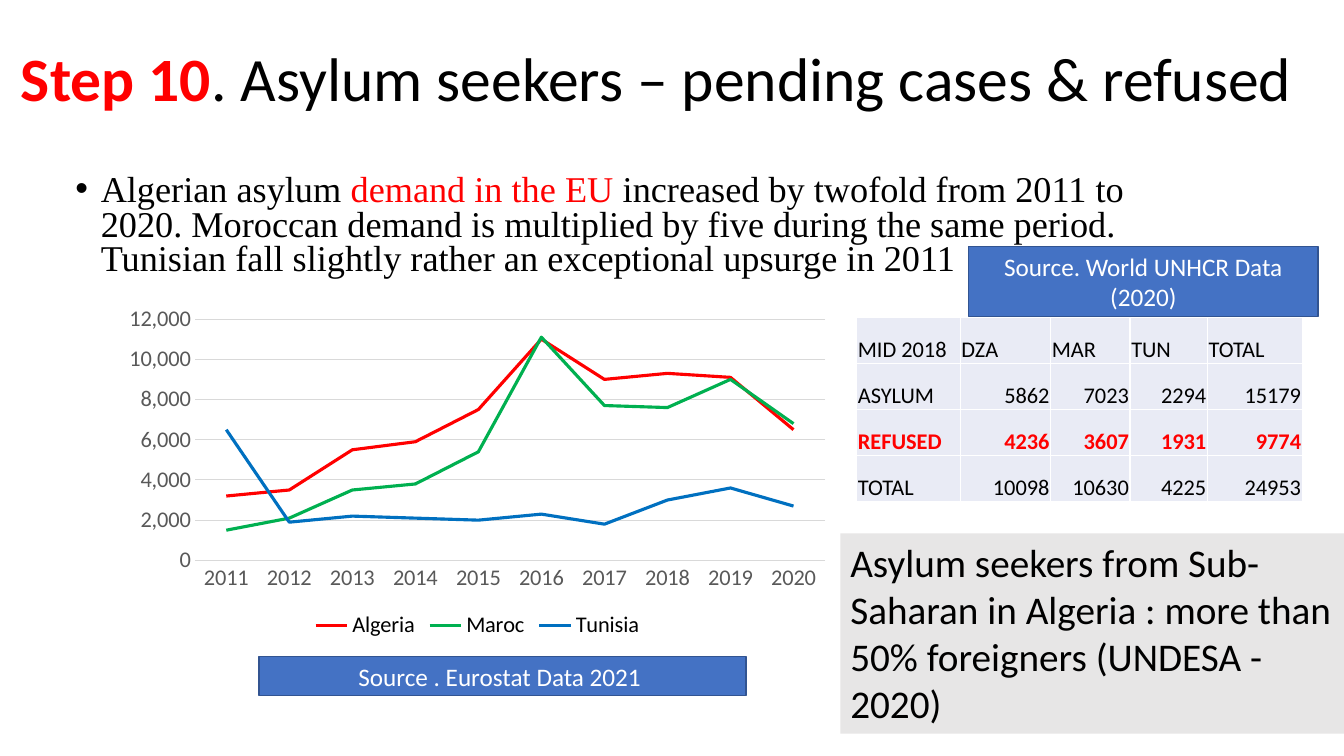
"""Build the slide on pending and refused asylum cases."""
from dataclasses import dataclass

from lxml.etree import SubElement
from pptx import Presentation
from pptx.chart.data import CategoryChartData
from pptx.dml.color import RGBColor
from pptx.enum.chart import XL_CHART_TYPE, XL_LEGEND_POSITION, XL_TICK_MARK
from pptx.enum.shapes import MSO_SHAPE
from pptx.enum.text import MSO_ANCHOR, PP_ALIGN
from pptx.oxml import parse_xml
from pptx.oxml.ns import nsdecls, qn
from pptx.util import Cm, Pt

BLACK, WHITE, RED = "000000", "FFFFFF", "FF0000"
BLUE, DARK_BLUE, GREY, PALE = "4472C4", "325491", "E7E6E6", "E9EBF5"
GRID, AXIS_TEXT = "D9D9D9", "595959"


@dataclass(frozen=True)
class Area:
    left: float
    top: float
    width: float
    height: float

    def lengths(self) -> tuple:
        return Cm(self.left), Cm(self.top), Cm(self.width), Cm(self.height)


@dataclass(frozen=True)
class Run:
    text: str
    color: str = BLACK
    bold: bool = False


@dataclass(frozen=True)
class Panel:
    area: Area
    text: str
    fill: str
    line: str | None
    size: float
    color: str
    align: PP_ALIGN
    anchor: MSO_ANCHOR


@dataclass(frozen=True)
class Country:
    name: str
    color: str
    requests: tuple


PANELS = [
    Panel(Area(6.53, 16.54, 12.27, 0.99), "Source . Eurostat Data 2021 ",
          BLUE, DARK_BLUE, 18, WHITE, PP_ALIGN.CENTER, MSO_ANCHOR.MIDDLE),
    Panel(Area(24.41, 6.22, 8.81, 1.75), "Source. World UNHCR Data (2020)",
          BLUE, DARK_BLUE, 18, WHITE, PP_ALIGN.CENTER, MSO_ANCHOR.MIDDLE),
    Panel(Area(21.18, 13.44, 12.7, 5.05),
          "Asylum seekers from Sub-Saharan in Algeria : more than 50% "
          "foreigners (UNDESA - 2020)",
          GREY, None, 28, BLACK, PP_ALIGN.LEFT, MSO_ANCHOR.TOP),
]
COUNTRIES = [
    Country("Algeria", RED,
            (3200, 3500, 5500, 5900, 7500, 11000, 9000, 9300, 9100, 6500)),
    Country("Maroc", "00B050",
            (1500, 2100, 3500, 3800, 5400, 11100, 7700, 7600, 9000, 6800)),
    Country("Tunisia", "0070C0",
            (6500, 1900, 2200, 2100, 2000, 2300, 1800, 3000, 3600, 2700)),
]
CASES = [
    ("MID 2018", "DZA", "MAR", "TUN", "TOTAL"),
    ("ASYLUM", "5862", "7023", "2294", "15179"),
    ("REFUSED", "4236", "3607", "1931", "9774"),
    ("TOTAL", "10098", "10630", "4225", "24953"),
]
CASE_WIDTHS = (2.61, 2.28, 2.0, 1.95, 2.39)


def rgb(color: str) -> RGBColor:
    return RGBColor.from_string(color)


def style_font(font, size: float, color: str, name: str = "Calibri",
               bold: bool = False) -> None:
    font.size, font.name, font.bold = Pt(size), name, bold
    font.color.rgb = rgb(color)


def write(frame, *runs: Run, size: float, font: str = "Calibri",
          align: PP_ALIGN = PP_ALIGN.LEFT, anchor: MSO_ANCHOR = MSO_ANCHOR.TOP,
          spacing: float = 1.0, bullet: bool = False) -> None:
    frame.word_wrap = True
    frame.vertical_anchor = anchor
    paragraph = frame.paragraphs[0]
    paragraph.alignment = align
    paragraph.line_spacing = spacing
    if bullet:
        properties = paragraph._p.get_or_add_pPr()
        properties.set("marL", str(Cm(0.64)))
        properties.set("indent", str(Cm(-0.64)))
        SubElement(properties, qn("a:buFont"), typeface="Arial")
        SubElement(properties, qn("a:buChar"), char="•")
    for part in runs:
        run = paragraph.add_run()
        run.text = part.text
        style_font(run.font, size, part.color, font, part.bold)


def add_panel(slide, panel: Panel) -> None:
    box = slide.shapes.add_shape(MSO_SHAPE.RECTANGLE, *panel.area.lengths())
    box.shadow.inherit = False
    box.fill.solid()
    box.fill.fore_color.rgb = rgb(panel.fill)
    if panel.line:
        box.line.color.rgb = rgb(panel.line)
        box.line.width = Pt(1)
    else:
        box.line.fill.background()
    write(box.text_frame, Run(panel.text, panel.color), size=panel.size,
          align=panel.align, anchor=panel.anchor)


def add_requests_chart(slide, area: Area) -> None:
    requests = CategoryChartData(number_format="#,##0")
    requests.categories = [str(year) for year in range(2011, 2021)]
    for country in COUNTRIES:
        requests.add_series(country.name, country.requests)
    chart = slide.shapes.add_chart(
        XL_CHART_TYPE.LINE, *area.lengths(), requests).chart
    style_font(chart.font, 10, BLACK)
    chart.has_title = False
    chart.has_legend = True
    chart.legend.position = XL_LEGEND_POSITION.BOTTOM
    chart.legend.include_in_layout = False
    style_font(chart.legend.font, 16, BLACK)
    chart.plots[0].vary_by_categories = False
    for series, country in zip(chart.plots[0].series, COUNTRIES):
        series.smooth = False
        series.format.line.color.rgb = rgb(country.color)
        series.format.line.width = Pt(2.25)
    years, amounts = chart.category_axis, chart.value_axis
    for axis in (years, amounts):
        axis.major_tick_mark = axis.minor_tick_mark = XL_TICK_MARK.NONE
        style_font(axis.tick_labels.font, 16, AXIS_TEXT)
    amounts.minimum_scale, amounts.maximum_scale = 0, 12000
    amounts.major_unit = 2000
    amounts.tick_labels.number_format = "#,##0"
    amounts.tick_labels.number_format_is_linked = False
    amounts.format.line.fill.background()
    for line in (years.format.line, amounts.major_gridlines.format.line):
        line.color.rgb = rgb(GRID)
        line.width = Pt(0.75)
    plot_area = chart._chartSpace.chart.plotArea
    for layout in plot_area.findall(qn("c:layout")):
        plot_area.remove(layout)
    plot_area.insert(0, parse_xml(
        f'<c:layout {nsdecls("c")}><c:manualLayout><c:layoutTarget val="inner"/>'
        '<c:xMode val="edge"/><c:yMode val="edge"/><c:x val="0.11"/>'
        '<c:y val="0.06"/><c:w val="0.87"/><c:h val="0.7"/>'
        '</c:manualLayout></c:layout>'))


def add_cases_table(slide, area: Area) -> None:
    table = slide.shapes.add_table(
        len(CASES), len(CASE_WIDTHS), *area.lengths()).table
    table.first_row = table.horz_banding = False
    for column, width in zip(table.columns, CASE_WIDTHS):
        column.width = Cm(width)
    for row_index, case in enumerate(CASES):
        refused = case[0] == "REFUSED"
        for column_index, entry in enumerate(case):
            cell = table.cell(row_index, column_index)
            cell.margin_left = cell.margin_right = cell.margin_top = Cm(0.03)
            cell.margin_bottom = Cm(0)
            for side in ("lnL", "lnR", "lnT", "lnB"):
                cell._tc.get_or_add_tcPr().append(parse_xml(
                    f'<a:{side} {nsdecls("a")} w="12700"><a:solidFill>'
                    f'<a:srgbClr val="{WHITE}"/></a:solidFill></a:{side}>'))
            cell.fill.solid()
            cell.fill.fore_color.rgb = rgb(PALE)
            write(cell.text_frame,
                  Run(entry, RED if refused else BLACK, refused), size=16,
                  align=PP_ALIGN.RIGHT if entry.isdigit() else PP_ALIGN.LEFT)
            cell.vertical_anchor = MSO_ANCHOR.BOTTOM


def main() -> None:
    deck = Presentation()
    deck.slide_width, deck.slide_height = Cm(33.87), Cm(19.05)
    slide = deck.slides.add_slide(deck.slide_layouts[6])
    heading = slide.shapes.add_textbox(*Area(0.28, 0, 33.58, 4.11).lengths())
    write(heading.text_frame, Run("Step 10", RED, True),
          Run(". Asylum seekers – pending cases & refused"),
          size=44, anchor=MSO_ANCHOR.MIDDLE, spacing=0.9)
    finding = slide.shapes.add_textbox(*Area(1.65, 4.27, 29.21, 2.92).lengths())
    write(finding.text_frame, Run("Algerian asylum "),
          Run("demand in the EU ", RED),
          Run("increased by twofold from 2011 to 2020. Moroccan demand is "
              "multiplied by five during the same period. Tunisian fall "
              "slightly rather an exceptional upsurge in 2011"),
          size=25.9, font="Times New Roman", spacing=0.8, bullet=True)
    add_requests_chart(slide, Area(2.9, 7.52, 18.26, 8.69))
    add_cases_table(slide, Area(21.59, 8, 11.23, 4.64))
    for panel in PANELS:
        add_panel(slide, panel)
    deck.save("out.pptx")


if __name__ == "__main__":
    main()
